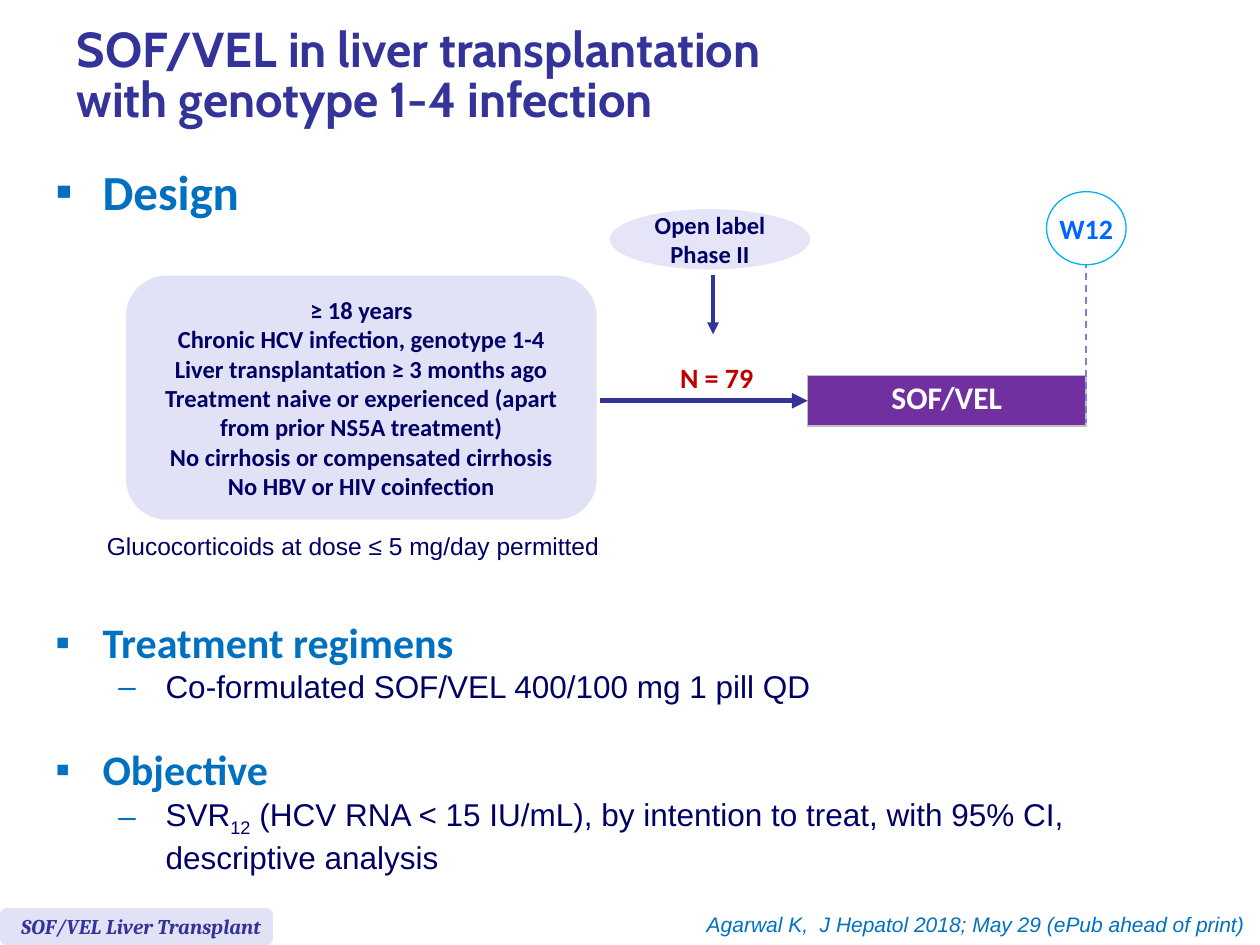
from dataclasses import dataclass

from lxml.etree import SubElement
from pptx import Presentation
from pptx.dml.color import RGBColor
from pptx.enum.dml import MSO_LINE
from pptx.enum.shapes import MSO_CONNECTOR, MSO_SHAPE
from pptx.enum.text import MSO_ANCHOR, PP_ALIGN
from pptx.oxml.ns import qn
from pptx.util import Pt

INDIGO = RGBColor(0x33, 0x33, 0x99)
NAVY = RGBColor(0x00, 0x00, 0x66)
BLUE = RGBColor(0x00, 0x70, 0xC0)
BRIGHT = RGBColor(0x00, 0x66, 0xFF)
CYAN = RGBColor(0x00, 0xB0, 0xF0)
LILAC = RGBColor(0xE2, 0xE2, 0xF6)
PALE = RGBColor(0xE5, 0xE5, 0xF7)
DASH = RGBColor(0x7E, 0x7E, 0xD4)
PURPLE = RGBColor(0x70, 0x30, 0xA0)
RED = RGBColor(0xC0, 0x00, 0x00)
GREY = RGBColor(0xC0, 0xC0, 0xC0)
WHITE = RGBColor(0xFF, 0xFF, 0xFF)


@dataclass(frozen=True)
class Box:
    left: float
    top: float
    width: float
    height: float

    def points(self):
        return [Pt(n) for n in (self.left, self.top, self.width, self.height)]


@dataclass(frozen=True)
class Style:
    font: str
    size: float
    color: RGBColor
    bold: bool = False
    slant: bool = False


@dataclass(frozen=True)
class Point:
    """A bulleted line; runs pair each text with its baseline shift."""
    runs: tuple
    level: int
    style: Style
    before: float = 0


@dataclass(frozen=True)
class Line:
    start: tuple
    end: tuple
    color: RGBColor
    width: float
    arrow: bool = True


MARKS = "▪–"
LABEL = Style("Calibri", 14, NAVY, bold=True)
HEAD = Style("Calibri", 24, BLUE, bold=True)
BODY = Style("Arial", 18, NAVY)

DESIGN = [Point((("Design", 0),), 0, Style("Calibri", 28, BLUE, bold=True))]
POINTS = [
    Point((("Treatment regimens", 0),), 0, HEAD),
    Point((("Co-formulated SOF/VEL 400/100 mg 1 pill QD", 0),), 1, BODY),
    Point((("Objective", 0),), 0, HEAD, 22),
    Point((("SVR", 0), ("12", -25),
           (" (HCV RNA < 15 IU/mL), by intention to treat, with 95% CI, "
            "descriptive analysis", 0)), 1, BODY, 0.7),
]
PATIENTS = [
    "≥ 18 years",
    "Chronic HCV infection, genotype 1-4",
    "Liver transplantation ≥ 3 months ago",
    "Treatment naive or experienced (apart from prior NS5A treatment)",
    "No cirrhosis or compensated cirrhosis",
    "No HBV or HIV coinfection",
]
DOSE_LINE = Line((620.6, 142), (620.6, 242), DASH, 1, arrow=False)
ARM_ARROW = Line((342.7, 229), (461.5, 229), INDIGO, 3)
LABEL_ARROW = Line((407.5, 157), (407.5, 191), INDIGO, 2.25)


def add_run(para, text: str, style: Style, shift: int = 0) -> None:
    run = para.add_run()
    run.text = text
    font = run.font
    font.name, font.size = style.font, Pt(style.size)
    font.bold, font.italic = style.bold, style.slant
    font.color.rgb = style.color
    if shift:
        run._r.get_or_add_rPr().set("baseline", str(shift * 1000))


def fill_text(frame, lines: list, style: Style, align=PP_ALIGN.LEFT,
              wrap: bool = True) -> None:
    frame.word_wrap = wrap
    for i, text in enumerate(lines):
        para = frame.add_paragraph() if i else frame.paragraphs[0]
        para.alignment = align
        add_run(para, text, style)


def add_text(slide, box: Box, lines: list, style: Style,
             align=PP_ALIGN.LEFT, wrap: bool = True):
    frame = slide.shapes.add_textbox(*box.points()).text_frame
    fill_text(frame, lines, style, align, wrap)
    return frame


def add_points(slide, box: Box, points: list) -> None:
    frame = slide.shapes.add_textbox(*box.points()).text_frame
    frame.word_wrap = True
    for i, point in enumerate(points):
        para = frame.add_paragraph() if i else frame.paragraphs[0]
        para.level = point.level
        props = para._p.get_or_add_pPr()
        props.set("marL", str(Pt(27 + 36 * point.level)))
        props.set("indent", str(Pt(-27)))
        tint = SubElement(props, qn("a:buClr"))
        SubElement(tint, qn("a:srgbClr"), val=str(BLUE))
        SubElement(props, qn("a:buFont"), typeface="Arial")
        SubElement(props, qn("a:buChar"), char=MARKS[point.level])
        if point.before:
            para.space_before = Pt(point.before)
        for text, shift in point.runs:
            add_run(para, text, point.style, shift)


def add_shape(slide, kind, box: Box, fill: RGBColor, lines: list = (),
              style: Style = LABEL, edge=None, wrap: bool = True) -> None:
    shape = slide.shapes.add_shape(kind, *box.points())
    shape.shadow.inherit = False
    shape.fill.solid()
    shape.fill.fore_color.rgb = fill
    if edge is None:
        shape.line.fill.background()
    else:
        shape.line.color.rgb = edge
        shape.line.width = Pt(0.75)
    shape.text_frame.vertical_anchor = MSO_ANCHOR.MIDDLE
    fill_text(shape.text_frame, lines, style, PP_ALIGN.CENTER, wrap)


def add_line(slide, line: Line) -> None:
    ends = [Pt(n) for n in line.start + line.end]
    item = slide.shapes.add_connector(MSO_CONNECTOR.STRAIGHT, *ends)
    item.line.color.rgb = line.color
    item.line.width = Pt(line.width)
    if line.arrow:
        SubElement(item.line._get_or_add_ln(), qn("a:tailEnd"), type="triangle")
    else:
        item.line.dash_style = MSO_LINE.DASH
    SubElement(item._element.spPr, qn("a:effectLst"))


def add_arm(slide, box: Box) -> None:
    """Draw the treatment arm as a table of one cell."""
    table = slide.shapes.add_table(1, 1, *box.points()).table
    cell = table.cell(0, 0)
    props = cell._tc.get_or_add_tcPr()
    for side in ("lnL", "lnR", "lnT", "lnB"):
        edge = SubElement(props, qn(f"a:{side}"), w=str(Pt(1)))
        paint = SubElement(edge, qn("a:solidFill"))
        SubElement(paint, qn("a:srgbClr"), val=str(GREY))
    cell.fill.solid()
    cell.fill.fore_color.rgb = PURPLE
    cell.vertical_anchor = MSO_ANCHOR.MIDDLE
    para = cell.text_frame.paragraphs[0]
    para.alignment, para.line_spacing = PP_ALIGN.CENTER, 0.8
    add_run(para, "SOF/VEL", Style("Calibri", 18, WHITE, bold=True))


def add_title(slide, box: Box) -> None:
    style = Style("Cabin", 28, INDIGO, bold=True)
    frame = add_text(slide, box, ["SOF/VEL in liver transplantation"], style)
    frame.vertical_anchor = MSO_ANCHOR.MIDDLE
    para = frame.paragraphs[0]
    para.line_spacing = 0.85
    para.add_line_break()
    add_run(para, "with genotype 1-4 infection", style)


def main() -> None:
    deck = Presentation()
    deck.slide_width, deck.slide_height = Pt(720), Pt(540)
    slide = deck.slides.add_slide(deck.slide_layouts[6])
    add_points(slide, Box(24.5, 349, 675, 152), POINTS)
    add_text(slide, Box(320.4, 517.5, 398, 22),
             ["Agarwal K,  J Hepatol 2018; May 29 (ePub ahead of print)"],
             Style("Arial", 12, BLUE, slant=True), PP_ALIGN.RIGHT)
    add_shape(slide, MSO_SHAPE.ROUNDED_RECTANGLE, Box(0, 519, 156, 21), LILAC)
    add_text(slide, Box(5, 518.4, 162, 22), ["SOF/VEL Liver Transplant"],
             Style("Cambria", 12, INDIGO, bold=True, slant=True))
    add_points(slide, Box(24.5, 88.5, 142.5, 45), DESIGN)
    add_arm(slide, Box(461.5, 214.5, 159, 29))
    add_shape(slide, MSO_SHAPE.OVAL, Box(348.5, 119.5, 114.5, 34.5), PALE,
              ["Open label", "Phase II"], wrap=False)
    add_shape(slide, MSO_SHAPE.ROUNDED_RECTANGLE, Box(72, 157.5, 269, 139.5),
              LILAC, PATIENTS)
    add_title(slide, Box(36.7, 5.8, 683, 77))
    add_line(slide, DOSE_LINE)
    add_shape(slide, MSO_SHAPE.OVAL, Box(598, 109.5, 45.5, 41.8), WHITE, ["W12"],
              Style("Calibri", 16, BRIGHT, bold=True), CYAN, wrap=False)
    add_text(slide, Box(381, 202.3, 57, 26.6), ["N = 79"],
             Style("Calibri", 16, RED, bold=True), PP_ALIGN.CENTER, wrap=False)
    add_line(slide, ARM_ARROW)
    note = add_text(slide, Box(54, 298, 318, 25),
                    ["Glucocorticoids at dose ≤ 5 mg/day permitted"],
                    Style("Arial", 14, NAVY))
    note.paragraphs[0].line_spacing = Pt(19)
    add_line(slide, LABEL_ARROW)
    deck.save("out.pptx")


if __name__ == "__main__":
    main()
